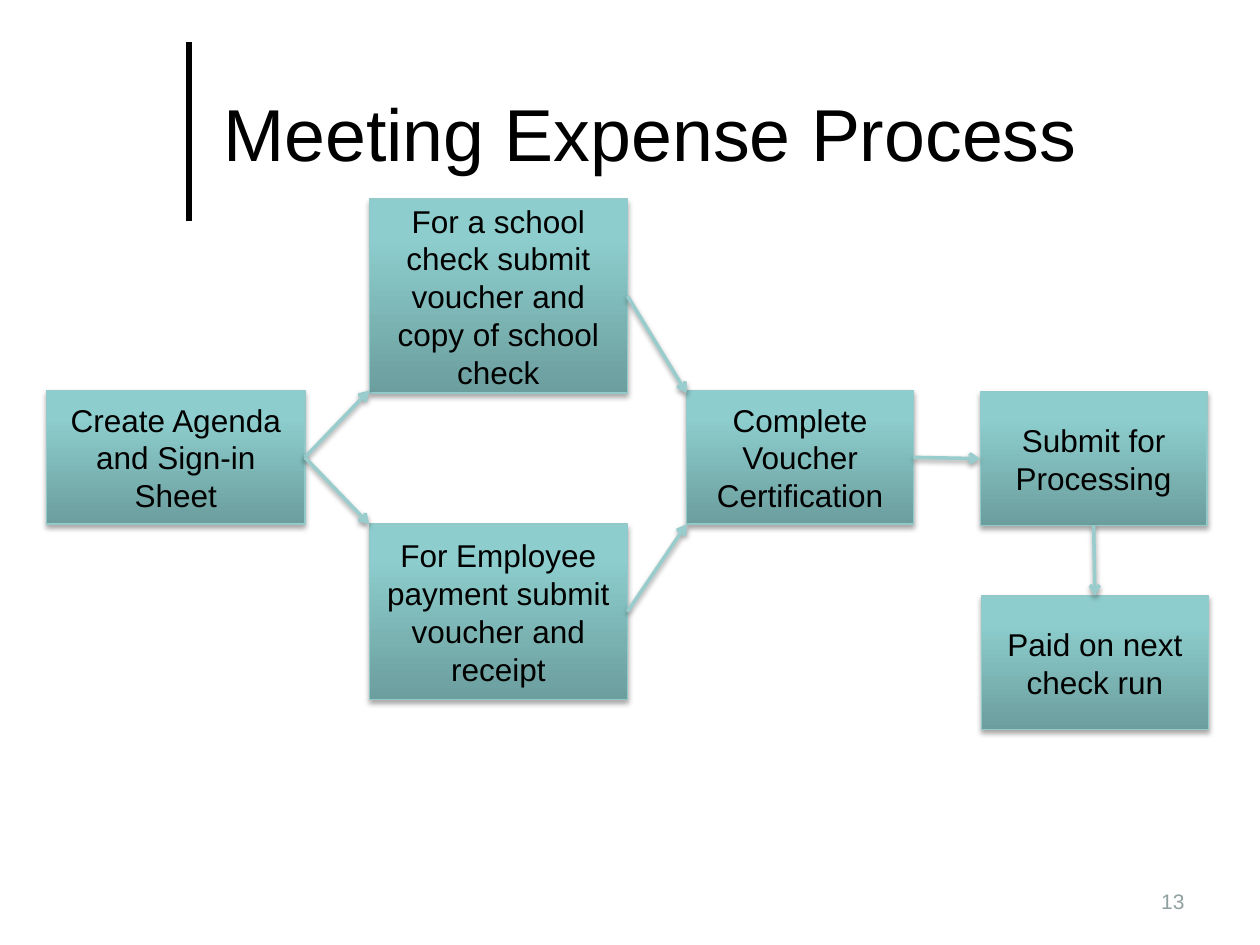
import copy

import pptx
import pptx.dml.color
import pptx.enum.shapes
import pptx.enum.text
import pptx.oxml
import pptx.oxml.ns
import pptx.util

Inches = pptx.util.Inches
Pt = pptx.util.Pt
RGBColor = pptx.dml.color.RGBColor
Align = pptx.enum.text.PP_ALIGN
qn = pptx.oxml.ns.qn

BLACK = RGBColor(0x00, 0x00, 0x00)
WHITE = RGBColor(0xFF, 0xFF, 0xFF)
GRAY = RGBColor(0x90, 0xA0, 0xA0)
EDGE = RGBColor(0x94, 0xC9, 0xC9)
ARROW = RGBColor(0x99, 0xCC, 0xCC)
GRADIENT = [
    (0, RGBColor(0x6C, 0x9E, 0x9E)),
    (0.8, RGBColor(0x8D, 0xCD, 0xCD)),
    (1, RGBColor(0x8C, 0xCF, 0xCF)),
]
FONT = "Arial"
TOP, LEFT, BOTTOM, RIGHT = range(4)


def write_text(shape, text, size=18, color=BLACK, align=Align.CENTER):
    frame = shape.text_frame
    frame.word_wrap = True
    frame.auto_size = pptx.enum.text.MSO_AUTO_SIZE.NONE
    frame.vertical_anchor = pptx.enum.text.MSO_ANCHOR.MIDDLE
    para = frame.paragraphs[0]
    para.alignment = align
    span = para.add_run()
    span.text = text
    span.font.name = FONT
    span.font.size = Pt(size)
    span.font.color.rgb = color


def set_effects(shape, opacity=None, distance=0):
    """Give the shape a soft shadow straight below it, or none without opacity."""
    properties = shape._element.spPr
    for old in properties.findall(qn("a:effectLst")):
        properties.remove(old)
    shadow = ""
    if opacity is not None:
        shadow = (
            f'<a:outerShdw blurRad="{Pt(3.1)}" dist="{Pt(distance)}" dir="5400000" '
            f'rotWithShape="0"><a:srgbClr val="{BLACK}">'
            f'<a:alpha val="{opacity * 1000}"/></a:srgbClr></a:outerShdw>'
        )
    namespace = pptx.oxml.ns.nsdecls("a")
    properties.append(
        pptx.oxml.parse_xml(f"<a:effectLst {namespace}>{shadow}</a:effectLst>")
    )


class ProcessSlide:
    def __init__(self, deck):
        self.page = deck.slides.add_slide(deck.slide_layouts[5])
        self.page.background.fill.solid()
        self.page.background.fill.fore_color.rgb = WHITE

    def title(self, text, left, top, width, height):
        title = self.page.shapes.title
        title.left, title.top = Inches(left), Inches(top)
        title.width, title.height = Inches(width), Inches(height)
        write_text(title, text, size=42, align=Align.LEFT)

    def line(self, start, end, color, width):
        line = self.page.shapes.add_connector(
            pptx.enum.shapes.MSO_CONNECTOR.STRAIGHT, *map(Inches, start + end)
        )
        line.line.color.rgb = color
        line.line.width = Pt(width)
        set_effects(line)
        return line

    def step(self, text, left, top, width, height=1.06):
        box = self.page.shapes.add_shape(
            pptx.enum.shapes.MSO_SHAPE.RECTANGLE,
            *map(Inches, (left, top, width, height)),
        )
        box.fill.gradient()
        box.fill.gradient_angle = 90
        stops = box._element.spPr.find(".//" + qn("a:gsLst"))
        stops.append(copy.deepcopy(stops[0]))
        for stop, (position, color) in zip(box.fill.gradient_stops, GRADIENT):
            stop.position = position
            stop.color.rgb = color
        box.line.color.rgb = EDGE
        box.line.width = Pt(0.75)
        set_effects(box, opacity=35, distance=1.8)
        write_text(box, text)
        return box

    def arrow(self, start, end, source=None, target=None):
        """Draw an arrow; source and target are (box, side) pairs to join."""
        arrow = self.line(start, end, ARROW, 2)
        if source:
            arrow.begin_connect(*source)
        if target:
            arrow.end_connect(*target)
        head = pptx.oxml.parse_xml(
            f'<a:tailEnd {pptx.oxml.ns.nsdecls("a")} type="arrow"/>'
        )
        arrow.line._get_or_add_ln().append(head)
        set_effects(arrow, opacity=38, distance=1.6)

    def page_number(self, text, left, top, width, height):
        box = self.page.shapes.add_textbox(
            *map(Inches, (left, top, width, height))
        )
        write_text(box, text, size=12, color=GRAY, align=Align.RIGHT)


def main():
    deck = pptx.Presentation()
    deck.slide_width, deck.slide_height = Inches(10), Inches(7.5)
    slide = ProcessSlide(deck)

    slide.line((1.5, 1.75), (1.5, 0.33), BLACK, 3)
    slide.title("Meeting Expense Process", 1.67, 0.21, 7.67, 1.67)

    agenda = slide.step("Create Agenda and Sign-in Sheet", 0.37, 3.1, 2.05)
    school = slide.step(
        "For a school check submit voucher and copy of school check",
        2.93, 1.58, 2.05, 1.54,
    )
    employee = slide.step(
        "For Employee payment submit voucher and receipt", 2.93, 4.16, 2.05, 1.39
    )
    certify = slide.step("Complete Voucher Certification", 5.45, 3.1, 1.8)
    submit = slide.step("Submit for Processing", 7.78, 3.11, 1.8)
    paid = slide.step("Paid on next check run", 7.79, 4.73, 1.8)

    slide.arrow((2.42, 3.63), (2.93, 3.1), source=(agenda, RIGHT))
    slide.arrow((2.42, 3.63), (2.93, 4.16), source=(agenda, RIGHT))
    slide.arrow((4.98, 2.35), (5.45, 3.12), source=(school, RIGHT))
    slide.arrow((4.98, 4.85), (5.45, 4.16), source=(employee, RIGHT))
    slide.arrow((7.25, 3.63), (7.78, 3.64), (certify, RIGHT), (submit, LEFT))
    slide.arrow((8.68, 4.17), (8.69, 4.73), (submit, BOTTOM), (paid, TOP))

    slide.page_number("13", 7.17, 6.95, 2.33, 0.4)
    deck.save("out.pptx")


if __name__ == "__main__":
    main()
